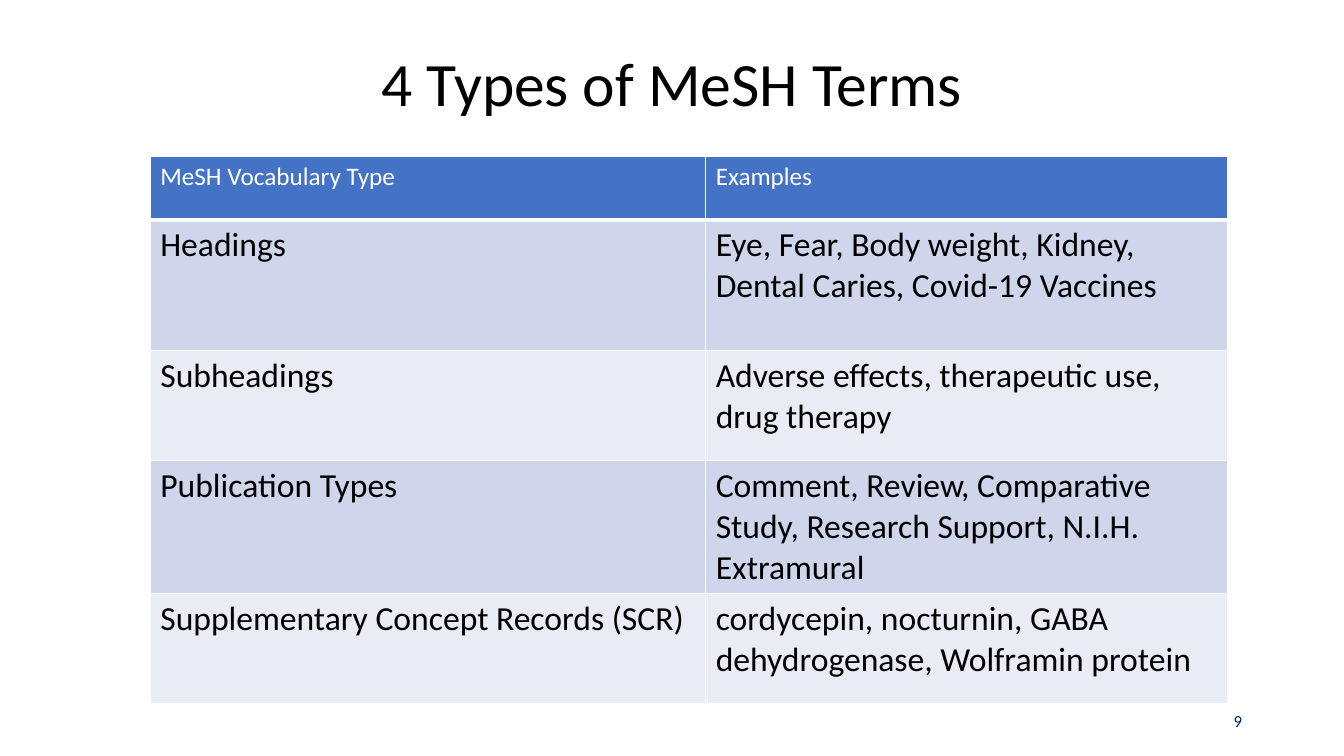
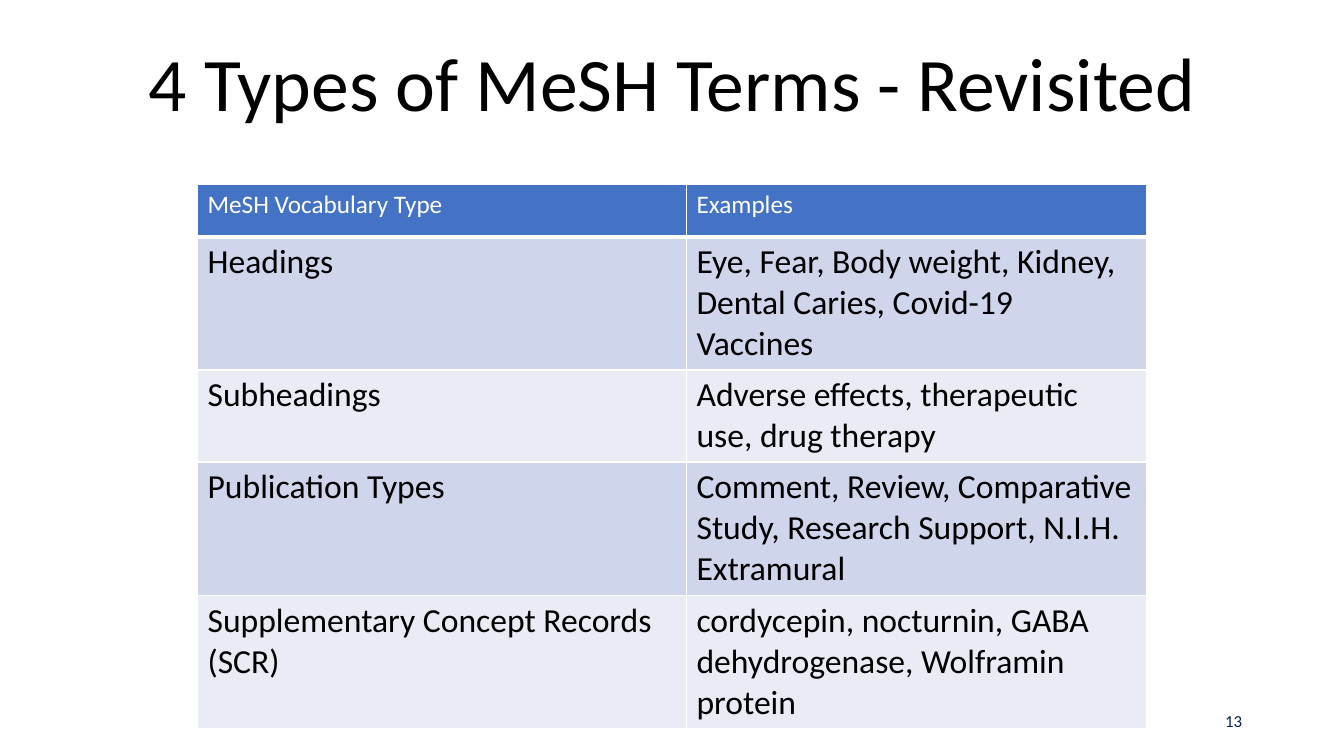
import dataclasses
import typing

import lxml.etree
import pptx
import pptx.dml.color
import pptx.enum.text
import pptx.oxml.ns
import pptx.util

WIDE, HIGH = 13.33, 7.5
GRID = 100  # columns and rows across the slide
FACE = "Calibri"
COLORS = {
    "head": "4472C4",
    "odd": "CFD5EA",
    "even": "E9EBF5",
    "line": "FFFFFF",
    "text": "000000",
    "number": "002060",
}
ALIGN = pptx.enum.text.PP_ALIGN
MIDDLE = pptx.enum.text.MSO_ANCHOR.MIDDLE
FRAME = {
    "word_wrap": True,
    "auto_size": pptx.enum.text.MSO_AUTO_SIZE.NONE,
    "vertical_anchor": MIDDLE,
}
TERMS = [
    ("MeSH Vocabulary Type", "Examples"),
    ("Headings", "Eye, Fear, Body weight, Kidney, Dental Caries, Covid-19 Vaccines"),
    ("Subheadings", "Adverse effects, therapeutic use, drug therapy"),
    ("Publication Types",
     "Comment, Review, Comparative\nStudy, Research Support, N.I.H. Extramural"),
    ("Supplementary Concept Records (SCR)",
     "cordycepin, nocturnin, GABA dehydrogenase, Wolframin protein"),
]


@dataclasses.dataclass(frozen=True)
class Box:
    """An area in grid columns and rows."""
    left: float
    top: float
    width: float
    height: float


@dataclasses.dataclass(frozen=True)
class Page:
    title: str
    size: int
    number: int
    left: float
    top: float
    cols: tuple[float, ...]
    rows: tuple[float, ...]


TITLE = Box(6.9, 4.53, 86.25, 13.87)
NUMBER = Box(84.08, 92.67, 9.08, 5.33)
PAGES = [
    Page("4 Types of MeSH Terms", 44, 9, 11.18, 20.67,
         (41.33, 38.85), (8.4, 17.33, 14.53, 14.53, 14.53)),
    Page("4 Types of MeSH Terms - Revisited", 54, 13, 14.7, 24.4,
         (36.38, 34.2), (6.93, 12, 12, 14.27, 12)),
]


def across(cols: float) -> int:
    return pptx.util.Inches(WIDE * cols / GRID)


def down(rows: float) -> int:
    return pptx.util.Inches(HIGH * rows / GRID)


def place(box: Box) -> tuple[int, int, int, int]:
    return across(box.left), down(box.top), across(box.width), down(box.height)


def apply(target: typing.Any, values: dict[str, typing.Any]) -> None:
    for name, value in values.items():
        setattr(target, name, value)


def tint(name: str) -> pptx.dml.color.RGBColor:
    return pptx.dml.color.RGBColor.from_string(COLORS[name])


def write(frame: typing.Any, text: str, size: int, color: str, **form: typing.Any) -> None:
    frame.text = text
    for para in frame.paragraphs:
        apply(para, form)
        apply(para.font, {"name": FACE, "size": pptx.util.Pt(size), "bold": False})
        para.font.color.rgb = tint(color)


def edge(cell: typing.Any, base: int) -> None:
    """Rule all four sides of a cell; base is the bottom width in points."""
    props = cell._tc.get_or_add_tcPr()
    for side, width in {"L": 1, "R": 1, "T": 1, "B": base}.items():
        line = lxml.etree.SubElement(props, pptx.oxml.ns.qn(f"a:ln{side}"),
                                     w=str(pptx.util.Pt(width)))
        fill = lxml.etree.SubElement(line, pptx.oxml.ns.qn("a:solidFill"))
        lxml.etree.SubElement(fill, pptx.oxml.ns.qn("a:srgbClr"), val=COLORS["line"])


def add_terms(slide: typing.Any, page: Page) -> None:
    area = Box(page.left, page.top, sum(page.cols), sum(page.rows))
    table = slide.shapes.add_table(len(page.rows), len(page.cols), *place(area)).table
    for col, width in zip(table.columns, page.cols):
        col.width = across(width)
    for index, (row, height, texts) in enumerate(zip(table.rows, page.rows, TERMS)):
        row.height = down(height)
        if index == 0:
            fill, color, size, base = "head", "line", 18, 3
        else:
            fill, color, size, base = ("odd" if index % 2 else "even"), "text", 24, 1
        for cell, text in zip(row.cells, texts):
            edge(cell, base)
            cell.fill.solid()
            cell.fill.fore_color.rgb = tint(fill)
            write(cell.text_frame, text, size, color)


def add_page(deck: typing.Any, page: Page) -> None:
    slide = deck.slides.add_slide(deck.slide_layouts[5])
    title = slide.shapes.title
    apply(title, dict(zip(("left", "top", "width", "height"), place(TITLE))))
    apply(title.text_frame, FRAME)
    write(title.text_frame, page.title, page.size, "text",
          alignment=ALIGN.CENTER, line_spacing=0.9)
    number = slide.shapes.add_textbox(*place(NUMBER)).text_frame
    apply(number, FRAME)
    write(number, str(page.number), 12, "number", alignment=ALIGN.RIGHT)
    add_terms(slide, page)


def main() -> None:
    deck = pptx.Presentation()
    apply(deck, {"slide_width": across(GRID), "slide_height": down(GRID)})
    for page in PAGES:
        add_page(deck, page)
    deck.save("out.pptx")


if __name__ == "__main__":
    main()
